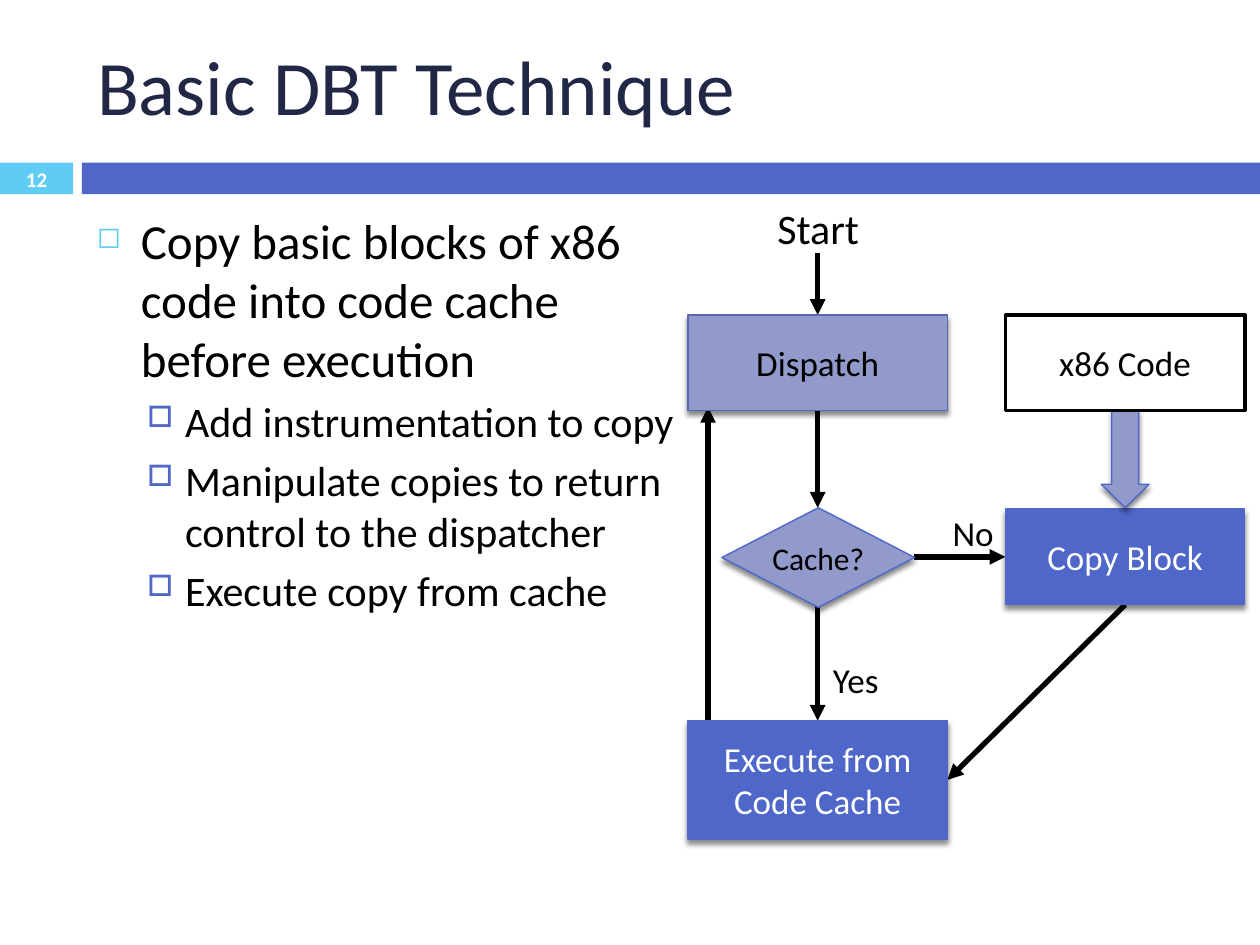
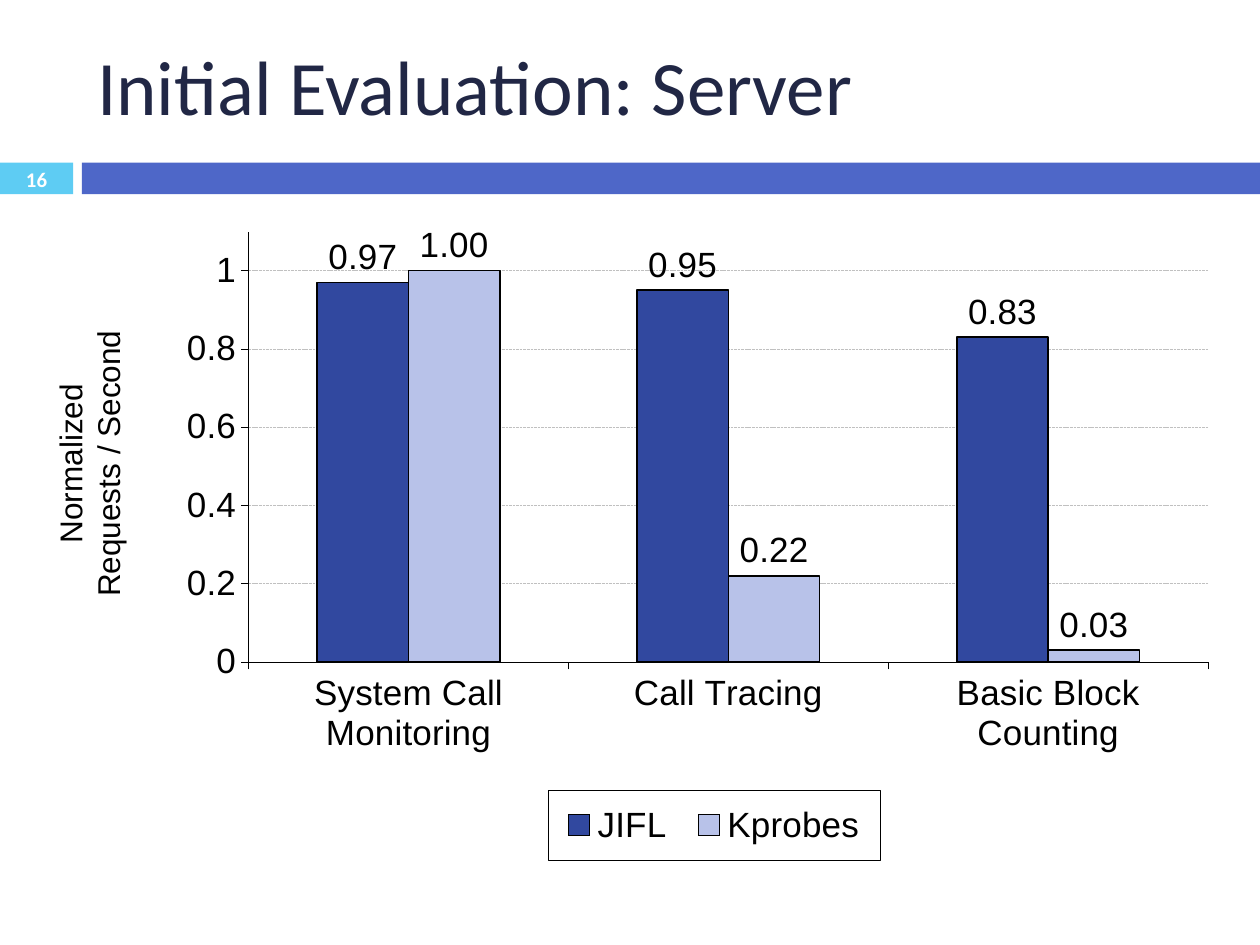
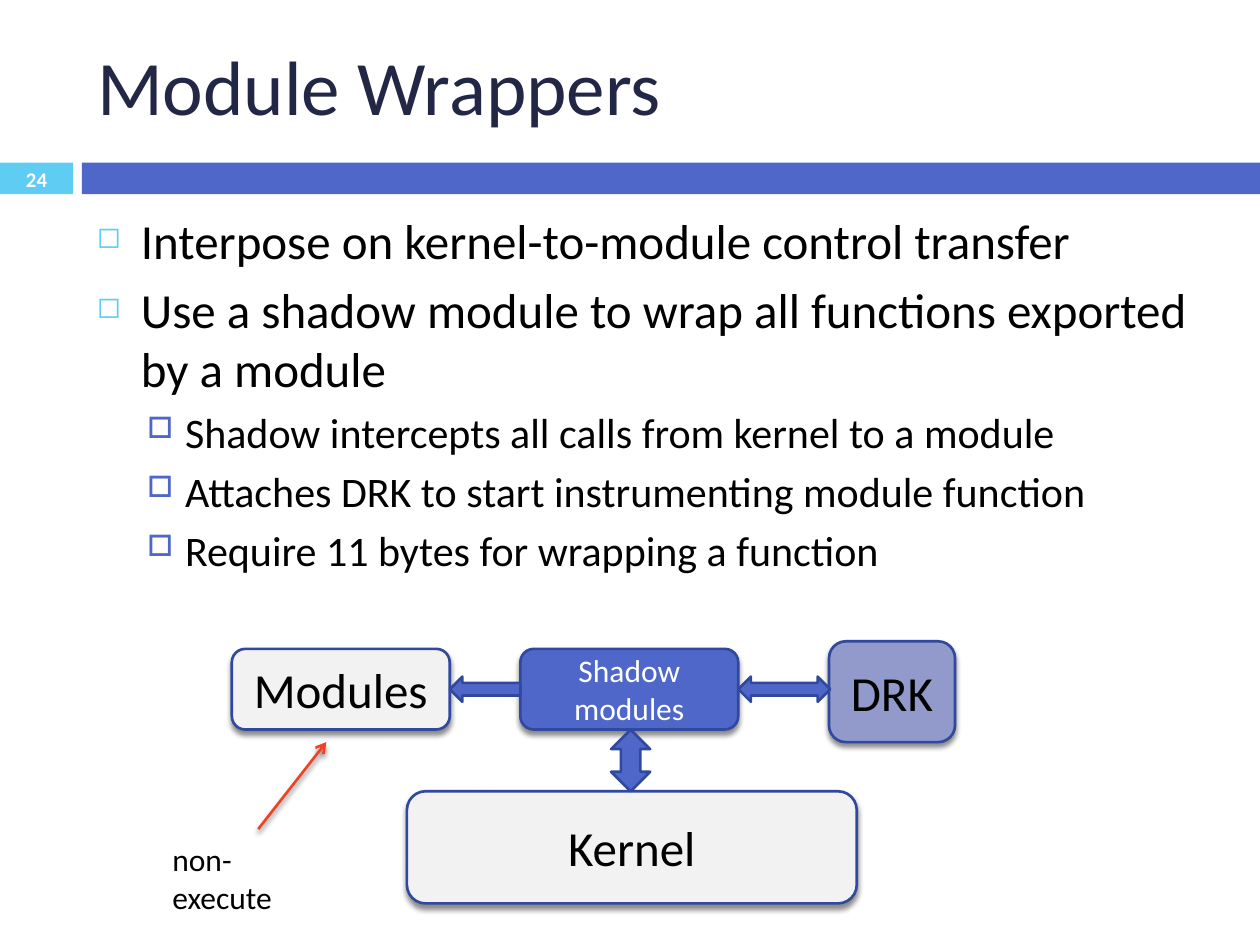
"""Build three slides on dynamic binary translation in the kernel."""
import pptx
import pptx.chart.data
import pptx.dml.color
import pptx.enum.chart
import pptx.enum.dml
import pptx.enum.shapes
import pptx.enum.text
import pptx.oxml
import pptx.oxml.ns
import pptx.util

Inches = pptx.util.Inches
Pt = pptx.util.Pt
Kind = pptx.enum.shapes.MSO_SHAPE
Align = pptx.enum.text.PP_ALIGN
Anchor = pptx.enum.text.MSO_ANCHOR
Fit = pptx.enum.text.MSO_AUTO_SIZE
Hue = pptx.dml.color.RGBColor.from_string
qn = pptx.oxml.ns.qn


class Theme:
    """Colours, faces and type sizes of the deck."""
    ink = Hue("000000")
    paper = Hue("FFFFFF")
    navy = Hue("212745")
    blue = Hue("4E67C8")
    sky = Hue("5ECCF3")
    mauve = Hue("919ACA")
    slate = Hue("5968B0")
    deep = Hue("31489F")
    pale = Hue("B8C2E9")
    mist = Hue("F2F2F2")
    grid = Hue("C0C0C0")
    red = Hue("F14124")
    face = "Calibri"
    plain = "Arial"
    title = 44
    large = 28
    mid = 24
    label = 20
    small = 18
    number = 11.9
    hair = 0.21
    edge = 0.79
    rim = 1.5


def write(para, text, size, color, face=Theme.face, bold=False):
    """Add one formatted run to a paragraph."""
    run = para.add_run()
    run.text = text
    run.font.size = Pt(size)
    run.font.color.rgb = color
    run.font.name = face
    run.font.bold = bold


def node(tag, inner="", attrs=""):
    """Make an XML element from its tag, content and attributes."""
    space = pptx.oxml.ns.nsdecls("a", "c")
    return pptx.oxml.parse_xml(f"<{tag} {space} {attrs}>{inner}</{tag}>")


shade = ('<a:outerShdw blurRad="38100" dist="30480" dir="5400000" rotWithShape="0">'
         '<a:srgbClr val="000000"><a:alpha val="45000"/></a:srgbClr></a:outerShdw>')
levels = [
    dict(size=Theme.large, left=0.35, hang=0.35, gap=6, mark="◻", color=Theme.sky, scale=60),
    dict(size=Theme.mid, left=0.7, hang=0.3, gap=5, mark="□", color=Theme.blue, scale=70),
]

flow = dict(
    title="Basic DBT Technique", number=12, width=4.88, inset=(0, 0),
    points=[
        (0, "Copy basic blocks of x86 code into code cache before execution"),
        (1, "Add instrumentation to copy"),
        (1, "Manipulate copies to return control to the dispatcher"),
        (1, "Execute copy from cache"),
    ],
    lines=[(place, Theme.ink, 3, "triangle", "") for place in (
        (6.49, 4.81, 6.49, 5.72),
        (8.93, 4.8, 7.52, 6.19),
        (5.62, 5.72, 5.62, 3.23),
        (6.49, 3.26, 6.49, 4.03),
        (6.49, 2.01, 6.49, 2.5),
        (7.25, 4.42, 7.98, 4.42),
    )],
    boxes=[
        (Kind.RECTANGLE, (5.46, 5.72, 2.06, 0.94), Theme.blue, Theme.blue, Theme.edge, shade,
         "Execute from Code Cache", Theme.label, Theme.paper),
        (Kind.RECTANGLE, (5.46, 2.5, 2.06, 0.76), Theme.mauve, Theme.slate, Theme.edge, shade,
         "Dispatch", Theme.label, Theme.ink),
        (Kind.DIAMOND, (5.73, 4.03, 1.53, 0.79), Theme.mauve, Theme.blue, Theme.edge, shade,
         "Cache?", Theme.small, Theme.ink),
        (Kind.RECTANGLE, (7.98, 4.04, 1.9, 0.76), Theme.blue, Theme.blue, Theme.edge, shade,
         "Copy Block", Theme.label, Theme.paper),
        (Kind.DOWN_ARROW, (8.74, 3.25, 0.38, 0.78), Theme.mauve, Theme.blue, Theme.edge, shade,
         "", Theme.label, Theme.ink),
        (Kind.RECTANGLE, (7.98, 2.5, 1.9, 0.76), Theme.paper, Theme.ink, 2, "",
         "x86 Code", Theme.label, Theme.ink),
    ],
    notes=[
        ((7.56, 4.06, 0.38, 0.34), "No", Theme.label, False),
        ((6.61, 5.22, 0.45, 0.34), "Yes", Theme.label, False),
        ((6.17, 1.61, 0.72, 0.4), "Start", Theme.mid, False),
    ],
)
bench = dict(title="Initial Evaluation: Server", number=16, width=0, inset=(0, 0),
             points=[], lines=[], boxes=[], notes=[])
wrap = dict(
    title="Module Wrappers", number=24, width=8.92, inset=(0.1, 0.05),
    points=[
        (0, "Interpose on kernel-to-module control transfer"),
        (0, "Use a shadow module to wrap all functions exported by a module"),
        (1, "Shadow intercepts all calls from kernel to a module"),
        (1, "Attaches DRK to start instrumenting module function"),
        (1, "Require 11 bytes for wrapping a function"),
    ],
    lines=[((2.05, 6.58, 2.59, 5.89), Theme.red, Theme.rim, "arrow", shade)],
    boxes=[(kind, place, fill, Theme.deep, Theme.rim, glow, text, size, color)
           for kind, place, fill, glow, text, size, color in (
        (Kind.ROUNDED_RECTANGLE, (3.23, 6.28, 3.57, 0.89), Theme.mist, shade,
         "Kernel", Theme.large, Theme.ink),
        (Kind.ROUNDED_RECTANGLE, (1.84, 5.15, 1.73, 0.64), Theme.mist, shade,
         "Modules", Theme.large, Theme.ink),
        (Kind.ROUNDED_RECTANGLE, (4.13, 5.15, 1.73, 0.64), Theme.blue, shade,
         "Shadow modules", Theme.small, Theme.paper),
        (Kind.ROUNDED_RECTANGLE, (6.58, 5.09, 1, 0.8), Theme.mauve, shade,
         "DRK", Theme.large, Theme.ink),
        (Kind.UP_DOWN_ARROW, (4.85, 5.79, 0.31, 0.49), Theme.blue, "", "", Theme.small, Theme.ink),
        (Kind.LEFT_RIGHT_ARROW, (5.86, 5.37, 0.73, 0.2), Theme.blue, "", "", Theme.small, Theme.ink),
        (Kind.LEFT_ARROW, (3.57, 5.37, 0.56, 0.2), Theme.blue, "", "", Theme.small, Theme.ink),
    )],
    notes=[((1.27, 6.62, 1.43, 0.4), "non-execute", Theme.small, True)],
)

deck = pptx.Presentation()
deck.slide_width, deck.slide_height = Inches(10), Inches(7.5)

for sheet in (flow, bench, wrap):
    slide = deck.slides.add_slide(deck.slide_layouts[5])
    shapes = slide.shapes

    for left, width, color in ((0, 0.58, Theme.sky), (0.65, 9.35, Theme.blue)):
        band = shapes.add_shape(Kind.RECTANGLE, Inches(left), Inches(1.29), Inches(width), Inches(0.25))
        band.shadow.inherit = False
        band.fill.solid()
        band.fill.fore_color.rgb = color
        band.line.fill.background()

    title = shapes.title
    title.left, title.top, title.width, title.height = map(Inches, (0.67, 0.13, 8.92, 1.08))
    frame = title.text_frame
    frame.auto_size = Fit.NONE
    frame.vertical_anchor = Anchor.MIDDLE
    frame.paragraphs[0].alignment = Align.LEFT
    write(frame.paragraphs[0], sheet["title"], Theme.title, Theme.navy)

    frame = shapes.add_textbox(0, Inches(1.29), Inches(0.58), Inches(0.27)).text_frame
    frame.word_wrap = True
    frame.vertical_anchor = Anchor.MIDDLE
    frame.paragraphs[0].alignment = Align.CENTER
    write(frame.paragraphs[0], str(sheet["number"]), Theme.number, Theme.paper, bold=True)

    if sheet["points"]:
        body = shapes.add_textbox(Inches(0.67), Inches(1.62), Inches(sheet["width"]), Inches(5.59))
        frame = body.text_frame
        frame.word_wrap = True
        for spot, (depth, text) in enumerate(sheet["points"]):
            para = frame.add_paragraph() if spot else frame.paragraphs[0]
            level = levels[depth]
            para.level = depth
            para.space_before = Pt(level["gap"])
            write(para, text, level["size"], Theme.ink)
            props = para._p.get_or_add_pPr()
            props.set("marL", str(Inches(level["left"])))
            props.set("indent", str(-Inches(level["hang"])))
            props.append(node("a:buClr", f'<a:srgbClr val="{level["color"]}"/>'))
            props.append(node("a:buSzPct", attrs=f'val="{level["scale"] * 1000}"'))
            props.append(node("a:buChar", attrs=f'char="{level["mark"]}"'))

    for place, color, weight, head, glow in sheet["lines"]:
        line = shapes.add_connector(pptx.enum.shapes.MSO_CONNECTOR.STRAIGHT, *map(Inches, place))
        line.line.color.rgb = color
        line.line.width = Pt(weight)
        props = line.element.spPr
        props.find(qn("a:ln")).append(node("a:tailEnd", attrs=f'type="{head}"'))
        props.append(node("a:effectLst", glow))

    for kind, place, fill, edge, weight, glow, text, size, color in sheet["boxes"]:
        box = shapes.add_shape(kind, *map(Inches, place))
        box.fill.solid()
        box.fill.fore_color.rgb = fill
        box.line.color.rgb = edge
        box.line.width = Pt(weight)
        box.shadow.inherit = False
        if glow:
            props = box.element.spPr
            props.replace(props.find(qn("a:effectLst")), node("a:effectLst", glow))
        if kind == Kind.DOWN_ARROW:
            box.adjustments[0], box.adjustments[1] = 0.56, 0.49
        if text:
            frame = box.text_frame
            frame.word_wrap = True
            frame.vertical_anchor = Anchor.MIDDLE
            frame.margin_left = frame.margin_right = Inches(sheet["inset"][0])
            frame.margin_top = frame.margin_bottom = Inches(sheet["inset"][1])
            frame.paragraphs[0].alignment = Align.CENTER
            write(frame.paragraphs[0], text, size, color)

    for place, text, size, wraps in sheet["notes"]:
        frame = shapes.add_textbox(*map(Inches, place)).text_frame
        frame.word_wrap = wraps
        frame.auto_size = Fit.SHAPE_TO_FIT_TEXT
        frame.vertical_anchor = Anchor.TOP if wraps else Anchor.MIDDLE
        frame.margin_left = frame.margin_right = Inches(sheet["inset"][0])
        frame.margin_top = frame.margin_bottom = Inches(sheet["inset"][1])
        write(frame.paragraphs[0], text, size, Theme.ink)

shapes = deck.slides[1].shapes
data = pptx.chart.data.CategoryChartData()
data.categories = ["System Call Monitoring", "Call Tracing", "Basic Block Counting"]
data.add_series("JIFL", (0.97, 0.95, 0.83))
data.add_series("Kprobes", (1, 0.22, 0.03))
chart = shapes.add_chart(pptx.enum.chart.XL_CHART_TYPE.COLUMN_CLUSTERED,
                         *map(Inches, (0.67, 1.62, 8.92, 5.59)), data).chart
chart.has_title = False
chart.has_legend = True
chart.legend.position = pptx.enum.chart.XL_LEGEND_POSITION.BOTTOM
chart.legend.include_in_layout = False
for font in (chart.font, chart.legend.font):
    font.name = Theme.plain
    font.size = Pt(Theme.label)
    font.color.rgb = Theme.ink

plot = chart.plots[0]
plot.vary_by_categories = False
plot.gap_width = 150
plot.overlap = 0
for series, color in zip(plot.series, (Theme.deep, Theme.pale)):
    series.format.fill.solid()
    series.format.fill.fore_color.rgb = color
    series.format.line.color.rgb = Theme.ink
    series.format.line.width = Pt(0.84)
plot.has_data_labels = True
labels = plot.data_labels
labels.show_value = True
labels.number_format = "0.00"
labels.number_format_is_linked = False
labels.position = pptx.enum.chart.XL_LABEL_POSITION.OUTSIDE_END

scale = chart.value_axis
scale.minimum_scale, scale.maximum_scale, scale.major_unit = 0, 1.1, 0.2
scale.has_major_gridlines = True
rule = scale.major_gridlines.format.line
rule.dash_style = pptx.enum.dml.MSO_LINE.SQUARE_DOT
rule.color.rgb = Theme.grid
rule.width = Pt(Theme.hair)
for axis in (chart.category_axis, scale):
    axis.major_tick_mark = pptx.enum.chart.XL_TICK_MARK.OUTSIDE
    axis.format.line.color.rgb = Theme.ink
    axis.format.line.width = Pt(Theme.hair)
for item in (labels, chart.category_axis.tick_labels, scale.tick_labels):
    item.font.name = Theme.plain
    item.font.size = Pt(Theme.label)
    item.font.color.rgb = Theme.ink

area = chart.element.find(".//" + qn("c:plotArea"))
legend = chart.element.find(".//" + qn("c:legend"))
for part, spot, target, frac in (
    (area, 0, '<c:layoutTarget val="inner"/>', (0.147, 0.039, 0.854, 0.611)),
    (legend, 1, "", (0.413, 0.832, 0.295, 0.1)),
):
    for old in part.findall(qn("c:layout")):
        part.remove(old)
    modes = '<c:xMode val="edge"/><c:yMode val="edge"/>'
    sides = "".join(f'<c:{side} val="{size}"/>' for side, size in zip("xywh", frac))
    part.insert(spot, node("c:layout", f"<c:manualLayout>{target}{modes}{sides}</c:manualLayout>"))
border = f'<a:ln w="{Pt(Theme.hair)}"><a:solidFill><a:srgbClr val="{Theme.ink}"/></a:solidFill></a:ln>'
legend.find(qn("c:overlay")).addnext(node("c:spPr", border))

name = shapes.add_textbox(*map(Inches, (-0.47, 3.32, 2.37, 0.72)))
name.rotation = 270
frame = name.text_frame
frame.word_wrap = False
frame.auto_size = Fit.SHAPE_TO_FIT_TEXT
for para, text in zip((frame.paragraphs[0], frame.add_paragraph()), ("Normalized", "Requests / Second")):
    para.alignment = Align.CENTER
    write(para, text, Theme.small, Theme.ink, Theme.plain)

deck.save("out.pptx")
